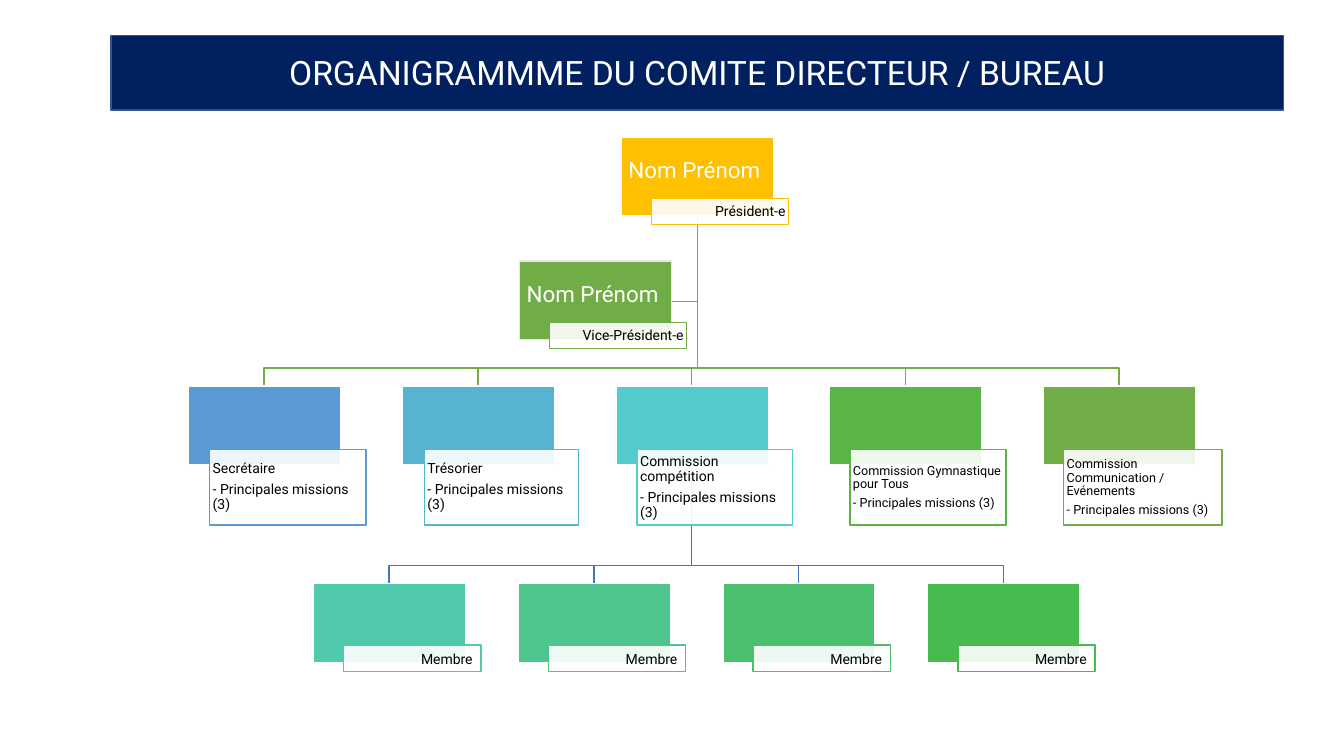
"""Build the organisation chart slide of the steering committee."""
import pptx
import pptx.dml.color
import pptx.enum.shapes
import pptx.enum.text
import pptx.oxml
import pptx.oxml.ns
import pptx.util

RGB = pptx.dml.color.RGBColor
ALIGN = pptx.enum.text.PP_ALIGN
PX = 9144
WHITE, BLACK = RGB(255, 255, 255), RGB(0, 0, 0)
NAVY, NAVY_EDGE = RGB(0x00, 0x20, 0x60), RGB(0x32, 0x54, 0x91)
GOLD, GREEN = RGB(0xFF, 0xC0, 0x00), RGB(0x70, 0xAD, 0x47)
BLUE, PALE = RGB(0x44, 0x72, 0xC4), RGB(0xE7, 0xE7, 0xE7)
CARD_W, CARD_H, CARD_MID = 151, 78, 75
TOP_X, TOP_Y = 616, 136
OFFICE_X, OFFICE_Y, OFFICE_STEP = 187, 383, 212
MEMBER_X, MEMBER_Y, MEMBER_STEP = 311, 579, 203
MISSIONS = "- Principales missions (3)"

leaders = [
    (TOP_X, TOP_Y, GOLD, WHITE, "Président-e"),
    (515, 259, GREEN, PALE, "Vice-Président-e"),
]
offices = [
    (RGB(0x5B, 0x9B, 0xD5), 208, 155, 10, "Secrétaire"),
    (RGB(0x57, 0xB4, 0xD1), 421, 153, 10, "Trésorier"),
    (RGB(0x54, 0xCC, 0xCD), 632, 154, 10, "Commission compétition"),
    (RGB(0x59, 0xB5, 0x46), 843, 155, 9, "Commission Gymnastique pour Tous"),
    (GREEN, 1055, 157, 9, "Commission Communication / Evénements"),
]
members = [RGB(0x51, 0xC9, 0xAD), RGB(0x4D, 0xC5, 0x8D),
           RGB(0x4A, 0xC0, 0x6E), RGB(0x48, 0xBB, 0x4F)]

prs = pptx.Presentation()
prs.slide_width, prs.slide_height = 1333 * PX, 750 * PX
s = prs.slides.add_slide(prs.slide_layouts[6])


def add_box(x, y, w, h, fill, edge, lines=(), size=10, color=WHITE,
            align=ALIGN.CENTER, margins=(1, 1, 1, 11)):
    sp = s.shapes.add_shape(pptx.enum.shapes.MSO_SHAPE.RECTANGLE,
                            x * PX, y * PX, w * PX, h * PX)
    sp.shadow.inherit = False
    sp.fill.solid()
    sp.fill.fore_color.rgb = fill
    sp.line.color.rgb = edge
    sp.line.width = pptx.util.Pt(1)
    tf = sp.text_frame
    tf.word_wrap = True
    tf.vertical_anchor = pptx.enum.text.MSO_ANCHOR.MIDDLE
    tf.margin_left, tf.margin_top, tf.margin_right, tf.margin_bottom = (
        m * PX for m in margins)
    for i, line in enumerate(lines):
        p = tf.add_paragraph() if i else tf.paragraphs[0]
        p.text = line
        p.alignment = align
        p.line_spacing = 0.9
        p.space_after = pptx.util.Pt(size * 0.4)
        p.font.size = pptx.util.Pt(size)
        p.font.name = "Roboto"
        p.font.color.rgb = color
    return sp


def add_label(x, y, w, h, edge, lines, size=10, align=ALIGN.RIGHT):
    sp = add_box(x, y, w, h, WHITE, edge, lines, size, BLACK, align, (3, 1, 3, 1))
    color = sp.fill._xPr.find(".//" + pptx.oxml.ns.qn("a:srgbClr"))
    color.append(pptx.oxml.parse_xml(
        f'<a:alpha {pptx.oxml.ns.nsdecls("a")} val="90000"/>'))
    return sp


top_mid = TOP_X + CARD_MID + 1
top_end = TOP_Y + CARD_H
office_mids = [OFFICE_X + CARD_MID + i * OFFICE_STEP for i in range(len(offices))]
member_mids = [MEMBER_X + CARD_MID + i * MEMBER_STEP for i in range(len(members))]
links = [([(top_mid, top_end), (top_mid, 299), (666, 299)], GREEN)]
for start_x, start_y, end_y, mids, color in [
        (top_mid, top_end, OFFICE_Y, office_mids, GREEN),
        (office_mids[2], OFFICE_Y + CARD_H, MEMBER_Y, member_mids, BLUE)]:
    bend = end_y - 18
    links += [([(start_x, start_y), (start_x, bend), (mid, bend), (mid, end_y)], color)
              for mid in mids]
for points, color in links:
    builder = s.shapes.build_freeform(*points[0], scale=PX)
    builder.add_line_segments(points[1:], close=False)
    sp = builder.convert_to_shape()
    sp.shadow.inherit = False
    sp.fill.background()
    sp.line.color.rgb = color
    sp.line.width = pptx.util.Pt(1)

for x, y, color, edge, role in leaders:
    add_box(x, y, CARD_W, CARD_H, color, edge, ["Nom Prénom "], 16)
    add_label(x + 30, y + 61, 136, 26, color, [role])

for i, (color, label_x, label_w, size, role) in enumerate(offices):
    add_box(OFFICE_X + i * OFFICE_STEP, OFFICE_Y, CARD_W, CARD_H, color, WHITE)
    add_label(label_x, OFFICE_Y + 63, label_w, 75, color, [role, MISSIONS],
              size, ALIGN.LEFT)

for i, color in enumerate(members):
    x = MEMBER_X + i * MEMBER_STEP
    add_box(x, MEMBER_Y, CARD_W, CARD_H, color, WHITE)
    label = add_label(x + 30, MEMBER_Y + 61, 136, 26, color, ["Membre"])
    r = label.text_frame.paragraphs[0].add_run()
    r.text = " "
    r.font.size = pptx.util.Pt(15)

title = add_box(110, 35, 1163, 74, NAVY, NAVY_EDGE,
                ["ORGANIGRAMMME DU COMITE DIRECTEUR / BUREAU"], 24,
                margins=(10, 5, 10, 5))
title.text_frame.paragraphs[0].line_spacing = 1.0
title.text_frame.paragraphs[0].space_after = 0

prs.save("out.pptx")
